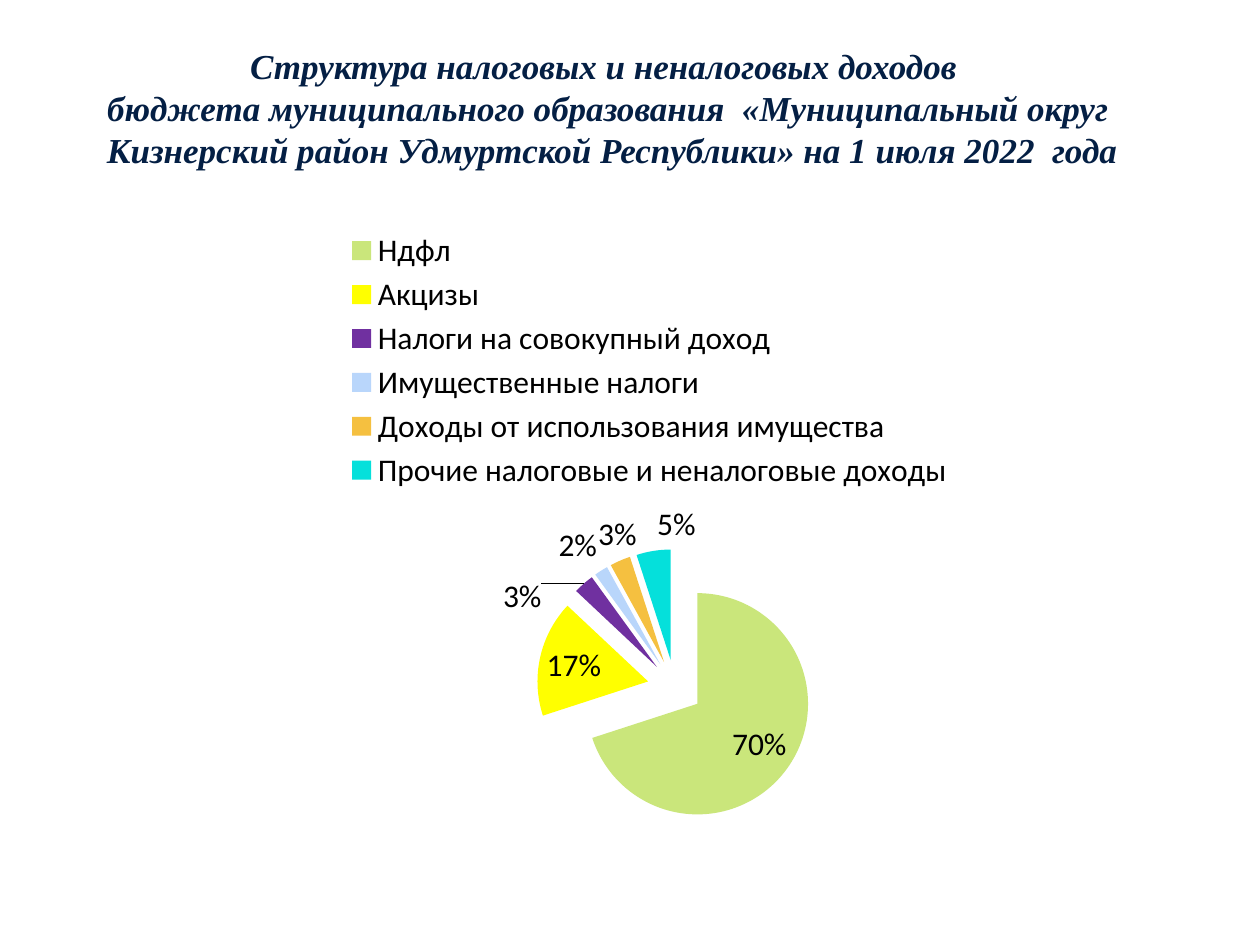
from pptx import Presentation
from pptx.chart.data import CategoryChartData
from pptx.dml.color import RGBColor
from pptx.enum.chart import XL_CHART_TYPE as ChartType
from pptx.enum.chart import XL_LABEL_POSITION as LabelPosition
from pptx.enum.chart import XL_LEGEND_POSITION as LegendPosition
from pptx.enum.text import MSO_ANCHOR, PP_ALIGN
from pptx.oxml import parse_xml
from pptx.oxml.ns import nsdecls
from pptx.util import Inches, Pt

NAVY = RGBColor(0x04, 0x1F, 0x44)
BLACK = RGBColor(0, 0, 0)
LIME = RGBColor(0xCA, 0xE6, 0x7B)
YELLOW = RGBColor(0xFF, 0xFF, 0x00)
PURPLE = RGBColor(0x70, 0x30, 0xA0)
SKY = RGBColor(0xB9, 0xD6, 0xFB)
AMBER = RGBColor(0xF5, 0xC0, 0x40)
TURQUOISE = RGBColor(0x05, 0xE0, 0xDB)

HEADING_LINES = [
    "Структура налоговых и неналоговых доходов ",
    "бюджета муниципального образования  «Муниципальный округ",
    " Кизнерский район Удмуртской Республики» на 1 июля 2022  года",
]
INCOME = [
    ("Ндфл", 70, LIME),
    ("Акцизы ", 17, YELLOW),
    ("Налоги на совокупный доход ", 3, PURPLE),
    ("Имущественные налоги", 2, SKY),
    ("Доходы от использования имущества", 3, AMBER),
    ("Прочие налоговые и неналоговые доходы", 5, TURQUOISE),
]
HEADING_BOX = (0, 0.39, 9.65, 0.92)
CHART_BOX = (1.09, 1.64, 8.13, 5.09)
LEGEND_AREA = {"x": 0.2, "y": 0.03, "w": 0.6, "h": 0.42}
PIE_AREA = {"x": 0.39, "y": 0.53, "w": 0.27, "h": 0.44}
HEADING_FONT = {"name": "Times New Roman", "size": Pt(20), "bold": True, "italic": True}
CHART_FONT = {"name": "Calibri", "size": Pt(18)}
EXPLOSION = 25


def style_font(font, values, color):
    for key, value in values.items():
        setattr(font, key, value)
    font.color.rgb = color


def manual_layout(area, target=""):
    modes = "".join(f'<c:{side}Mode val="edge"/>' for side in "xy")
    sizes = "".join(f'<c:{key} val="{value}"/>' for key, value in area.items())
    return parse_xml(
        f'<c:layout {nsdecls("c")}><c:manualLayout>{target}{modes}{sizes}'
        "</c:manualLayout></c:layout>"
    )


def add_heading(slide):
    frame = slide.shapes.add_textbox(*map(Inches, HEADING_BOX)).text_frame
    frame.word_wrap = True
    frame.vertical_anchor = MSO_ANCHOR.MIDDLE
    heading = frame.paragraphs[0]
    heading.text = "\v".join(HEADING_LINES)
    heading.alignment = PP_ALIGN.CENTER
    for run in heading.runs:
        style_font(run.font, HEADING_FONT, NAVY)


def add_income_pie(slide):
    names, shares, colors = zip(*INCOME)
    data = CategoryChartData()
    data.categories = names
    data.add_series("Series 1", shares)
    chart = slide.shapes.add_chart(
        ChartType.PIE, *map(Inches, CHART_BOX), data
    ).chart
    style_font(chart.font, CHART_FONT, BLACK)
    chart.has_title = False
    chart.has_legend = True
    legend = chart.legend
    legend.position = LegendPosition.TOP
    legend.include_in_layout = False

    pie = chart.plots[0]
    pie.vary_by_categories = True
    pie.has_data_labels = True
    labels = pie.data_labels
    label_format = {
        "show_percentage": True,
        "show_value": False,
        "number_format": "0%",
        "number_format_is_linked": False,
        "position": LabelPosition.BEST_FIT,
    }
    for key, value in label_format.items():
        setattr(labels, key, value)
    style_font(labels.font, CHART_FONT, BLACK)

    series = pie.series[0]
    for index, color in enumerate(colors):
        fill = series.points[index].format.fill
        fill.solid()
        fill.fore_color.rgb = color
    first_point = series._element.find("{*}dPt")
    first_point.addprevious(
        parse_xml(f'<c:explosion {nsdecls("c")} val="{EXPLOSION}"/>')
    )

    plot_area = chart._chartSpace.chart.plotArea
    for old_layout in plot_area.findall("{*}layout"):
        plot_area.remove(old_layout)
    plot_area.insert(0, manual_layout(PIE_AREA, '<c:layoutTarget val="inner"/>'))
    legend_element = legend._element
    for old_layout in legend_element.findall("{*}layout"):
        legend_element.remove(old_layout)
    legend_element.find("{*}legendPos").addnext(manual_layout(LEGEND_AREA))


def main():
    deck = Presentation()
    deck.slide_width, deck.slide_height = Inches(10), Inches(7.5)
    slide = deck.slides.add_slide(deck.slide_layouts[6])
    add_heading(slide)
    add_income_pie(slide)
    deck.save("out.pptx")


if __name__ == "__main__":
    main()
